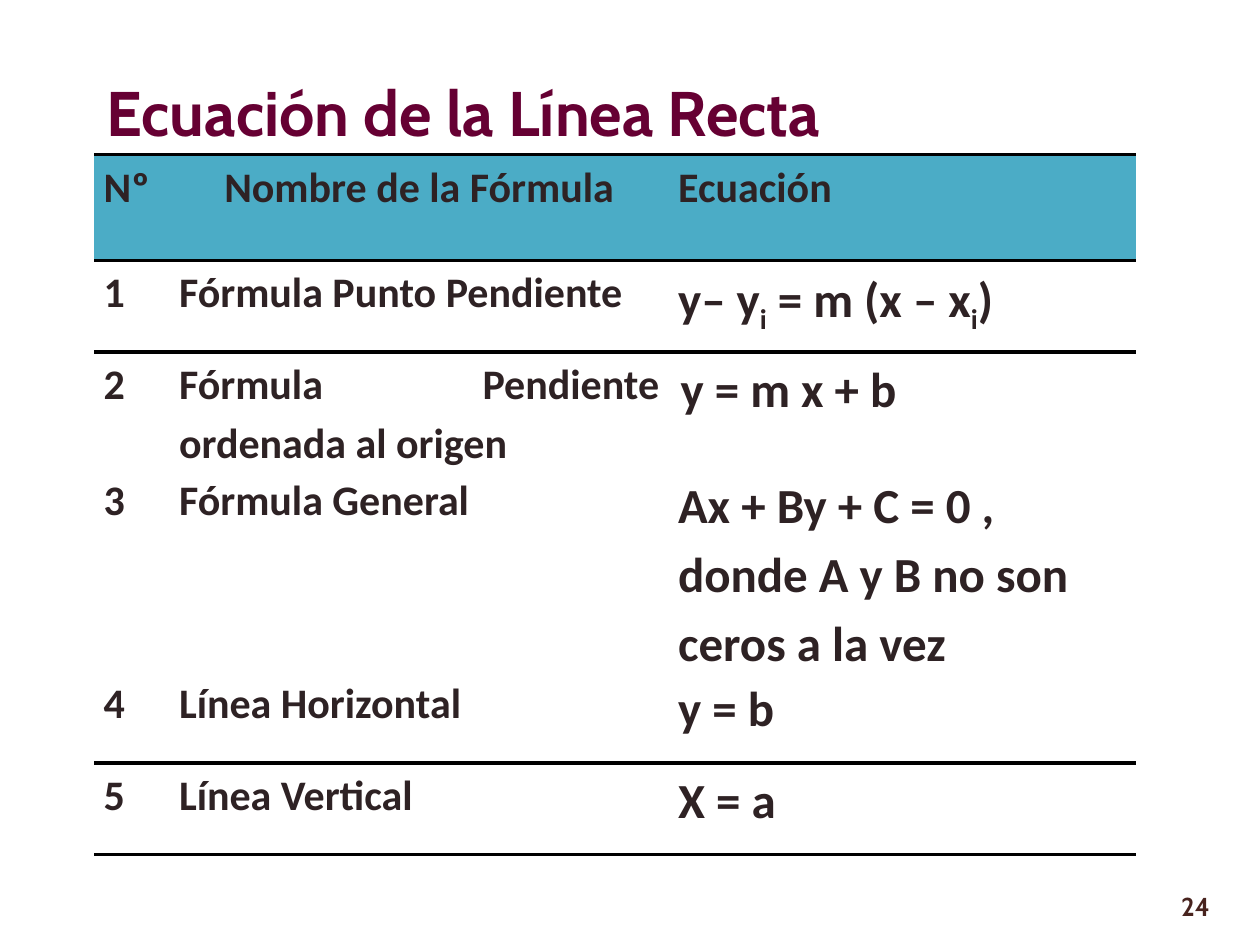
"""Build a slide with a table of the equations of the straight line."""
from dataclasses import dataclass

from lxml.etree import SubElement
from pptx import Presentation
from pptx.dml.color import RGBColor
from pptx.enum.text import MSO_ANCHOR as Anchor, PP_ALIGN as Align
from pptx.oxml.ns import qn
from pptx.util import Cm, Pt

COLORS = {"title": "660033", "text": "2E2224", "header": "4BACC6",
          "row": "FFFFFF", "rule": "000000", "number": "48231E"}
NO_STYLE_NO_GRID = "{2D5ABB26-0587-4C30-8999-92F81FD0307C}"
COLUMN_WIDTHS = (1.52, 10.06, 9.42)
ROW_HEIGHTS = (2.13, 1.85, 2.13, 3.78, 1.85, 1.85)
RULED_EDGES = {0, 1, 5, 6}
HEADER = ("Nº", "Nombre de la Fórmula", "Ecuación")


@dataclass
class Label:
    text: str
    left: float
    top: float
    width: float
    height: float
    size: float
    color: str
    anchor: Anchor
    align: Align


@dataclass
class Formula:
    name: str
    terms: tuple[str, ...]
    indent: float = 0


LABELS = (
    Label("Ecuación de la Línea Recta", 1.9, 0.74, 21.59, 2.39, 36, "title",
          Anchor.BOTTOM, Align.LEFT),
    Label("24", 22.2, 17.86, 2.44, 0.81, 14.8, "number", Anchor.MIDDLE, Align.RIGHT),
)
FORMULAS = (
    Formula("Fórmula Punto Pendiente", ("y– y", "i", " = m (x – x", "i", ")")),
    Formula("Fórmula Pendiente ordenada al origen", ("y = m x + b",), 0.05),
    Formula("Fórmula General", ("Ax + By + C = 0 ,", "\n", "donde A y B no son ceros a la vez")),
    Formula("Línea Horizontal", ("y = b",)),
    Formula("Línea Vertical", ("X = a",)),
)


def add_span(para, text: str, size: float, color: str, font: str = "Calibri"):
    """Add one bold run and return it."""
    span = para.add_run()
    span.text = text
    span.font.name = font
    span.font.size = Pt(size)
    span.font.bold = True
    span.font.color.rgb = RGBColor.from_string(COLORS[color])
    return span


def add_label(page, label: Label) -> None:
    """Draw a free text box."""
    box = page.shapes.add_textbox(Cm(label.left), Cm(label.top),
                                  Cm(label.width), Cm(label.height))
    frame = box.text_frame
    frame.word_wrap = True
    frame.vertical_anchor = label.anchor
    para = frame.paragraphs[0]
    para.alignment = label.align
    add_span(para, label.text, label.size, label.color, "Cabin")


def add_rules(cell, row: int) -> None:
    """Draw the horizontal rules that touch a cell."""
    properties = cell._tc.get_or_add_tcPr()
    for tag, edge in (("a:lnT", row), ("a:lnB", row + 1)):
        if edge in RULED_EDGES:
            line = SubElement(properties, qn(tag), w=str(Pt(2.25)))
            fill = SubElement(line, qn("a:solidFill"))
            SubElement(fill, qn("a:srgbClr"), val=COLORS["rule"])


def prepare_cell(cell, row: int, align: Align = Align.LEFT):
    """Set rules, fill and margins of a cell and return its paragraph."""
    add_rules(cell, row)
    cell.fill.solid()
    cell.fill.fore_color.rgb = RGBColor.from_string(COLORS["row" if row else "header"])
    cell.margin_left = cell.margin_right = Cm(0.19)
    cell.margin_top = cell.margin_bottom = Cm(0)
    para = cell.text_frame.paragraphs[0]
    para.alignment = align
    para.line_spacing = 1.15
    return para


def add_equation(para, formula: Formula) -> None:
    """Write an equation with its subscripts and line breaks."""
    if formula.indent:
        para._p.get_or_add_pPr().set("marL", str(Cm(formula.indent)))
    for term in formula.terms:
        if term == "\n":
            para.add_line_break()
            continue
        span = add_span(para, term, 28, "text")
        if term == "i":
            span._r.get_or_add_rPr().set("baseline", "-25000")


def add_formula_table(page) -> None:
    """Draw the table of formulas."""
    frame = page.shapes.add_table(len(ROW_HEIGHTS), len(COLUMN_WIDTHS), Cm(1.9), Cm(3.12),
                                  Cm(sum(COLUMN_WIDTHS)), Cm(sum(ROW_HEIGHTS)))
    table = frame.table
    table.first_row = table.horz_banding = False
    table._tbl.tblPr.find(qn("a:tableStyleId")).text = NO_STYLE_NO_GRID
    for column, width in zip(table.columns, COLUMN_WIDTHS):
        column.width = Cm(width)
    for row, height in zip(table.rows, ROW_HEIGHTS):
        row.height = Cm(height)
    for column, text in enumerate(HEADER):
        align = Align.CENTER if column == 1 else Align.LEFT
        add_span(prepare_cell(table.cell(0, column), 0, align), text, 24, "text")
    for row, formula in enumerate(FORMULAS, start=1):
        add_span(prepare_cell(table.cell(row, 0), row), str(row), 24, "text")
        add_span(prepare_cell(table.cell(row, 1), row, Align.JUSTIFY), formula.name, 24, "text")
        add_equation(prepare_cell(table.cell(row, 2), row), formula)


def main() -> None:
    """Build and save the deck."""
    deck = Presentation()
    deck.slide_width, deck.slide_height = Cm(25.4), Cm(19.05)
    page = deck.slides.add_slide(deck.slide_layouts[6])
    title, number = LABELS
    add_label(page, title)
    add_formula_table(page)
    add_label(page, number)
    deck.save("out.pptx")


if __name__ == "__main__":
    main()
